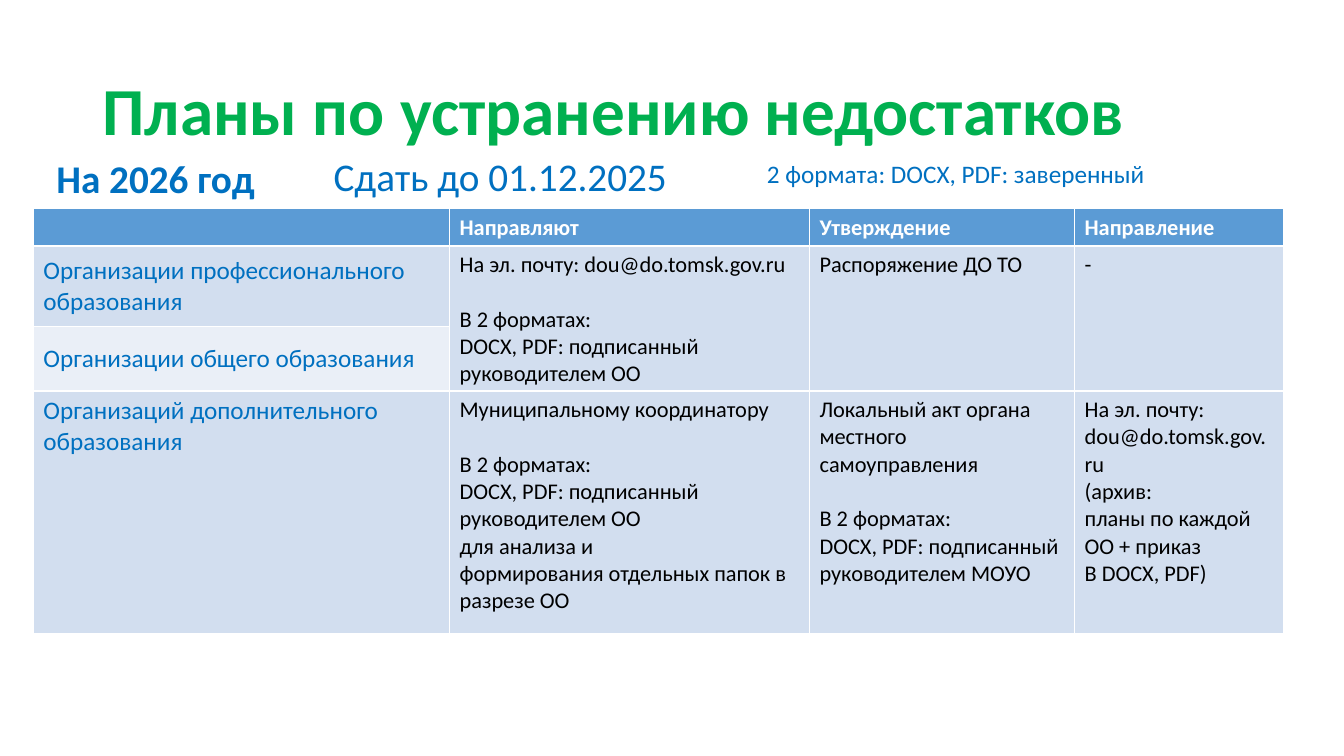
from pptx import Presentation
from pptx.dml.color import RGBColor
from pptx.enum.text import MSO_ANCHOR as Anchor, PP_ALIGN as Align
from pptx.util import Cm, Pt

COLORS = {
    "title": "00B050",
    "accent": "0070C0",
    "header": "5B9BD5",
    "band": "D2DEEF",
    "light": "EAEFF7",
    "white": "FFFFFF",
    "black": "000000",
}
FONT = "Calibri"
COLUMNS = [10.49, 9.07, 6.68, 5.26]
ROWS = [0.94, 2.03, 1.58, 6.12]
FORMATS = "В 2 форматах:"
SIGNED = "DOCX, PDF: подписанный руководителем "
EMAIL = "На эл. почту: dou@do.tomsk.gov.ru"
HEADINGS = ["", "Направляют", "Утверждение", "Направление"]
ORGANIZATIONS = [
    ("Организации профессионального образования", "band", Anchor.MIDDLE),
    ("Организации общего образования", "light", Anchor.MIDDLE),
    ("Организаций дополнительного образования", "band", Anchor.TOP),
]
DIRECT_ROUTE = [
    [EMAIL, FORMATS, SIGNED + "ОО"],
    ["Распоряжение ДО ТО"],
    ["-"],
]
MUNICIPAL_ROUTE = [
    ["Муниципальному координатору", FORMATS, SIGNED + "ОО", "для анализа и",
     "формирования отдельных папок в разрезе ОО"],
    ["Локальный акт органа местного самоуправления", FORMATS, SIGNED + "МОУО"],
    [EMAIL, "(архив:", "планы по каждой ОО + приказ", "В DOCX, PDF)"],
]


def write(frame, lines, size, color, bold=False, align=Align.LEFT):
    """Write lines as paragraphs, with a one-line gap above the formats heading."""
    frame.text = "\n".join(lines)
    for paragraph in frame.paragraphs:
        paragraph.alignment = align
        font = paragraph.font
        font.name, font.size, font.bold = FONT, Pt(size), bold
        font.color.rgb = RGBColor.from_string(COLORS[color])
        if paragraph.text == FORMATS:
            paragraph.space_before = Pt(19.5)


def add_label(slide, box, text, size, color, bold=False, align=Align.JUSTIFY, wrap=False):
    """Add one line of text in the given box and return its frame."""
    frame = slide.shapes.add_textbox(*map(Cm, box)).text_frame
    frame.word_wrap = wrap
    write(frame, [text], size, color, bold, align)
    return frame


def add_heading(slide, left, top):
    """Place the title and the three deadline notes below it."""
    title = add_label(slide, (left + 1.17, top, 29.21, 3.68),
                      "Планы по устранению недостатков", 48, "title", True, Align.LEFT, True)
    title.vertical_anchor = Anchor.MIDDLE
    title.paragraphs[0].line_spacing = 0.9
    add_label(slide, (left, top + 2.74, 26.04, 2.64), "На 2026 год", 28, "accent", True, wrap=True)
    add_label(slide, (left + 6.99, top + 2.69, 9.02, 1.45), "Сдать до 01.12.2025", 28, "accent")
    add_label(slide, (left + 17.91, top + 2.84, 10.24, 1.02),
              "2 формата: DOCX, PDF: заверенный", 18, "accent")


def fill_cell(cell, lines, size, color, fill, bold=False):
    """Fill a table cell with colour and text."""
    cell.fill.solid()
    cell.fill.fore_color.rgb = RGBColor.from_string(COLORS[fill])
    write(cell.text_frame, lines, size, color, bold)


def add_routes(slide, left, top):
    """Place the table of submission routes by type of organization."""
    table = slide.shapes.add_table(len(ROWS), len(COLUMNS), Cm(left), Cm(top),
                                   Cm(sum(COLUMNS)), Cm(sum(ROWS))).table
    for column, width in zip(table.columns, COLUMNS):
        column.width = Cm(width)
    for row, height in zip(table.rows, ROWS):
        row.height = Cm(height)
    for index, heading in enumerate(HEADINGS):
        fill_cell(table.cell(0, index), [heading], 16, "white", "header", True)
    for index, (organization, fill, anchor) in enumerate(ORGANIZATIONS, 1):
        cell = table.cell(index, 0)
        fill_cell(cell, [organization], 18, "accent", fill)
        cell.vertical_anchor = anchor
    for index, (direct, municipal) in enumerate(zip(DIRECT_ROUTE, MUNICIPAL_ROUTE), 1):
        table.cell(1, index).merge(table.cell(2, index))
        fill_cell(table.cell(1, index), direct, 16, "black", "band")
        fill_cell(table.cell(3, index), municipal, 16, "black", "band")


def main():
    """Build the slide and save it."""
    deck = Presentation()
    deck.slide_width, deck.slide_height = Cm(33.87), Cm(19.05)
    slide = deck.slides.add_slide(deck.slide_layouts[6])
    add_heading(slide, 1.17, 1.02)
    add_routes(slide, 0.84, 5.26)
    deck.save("out.pptx")


if __name__ == "__main__":
    main()
